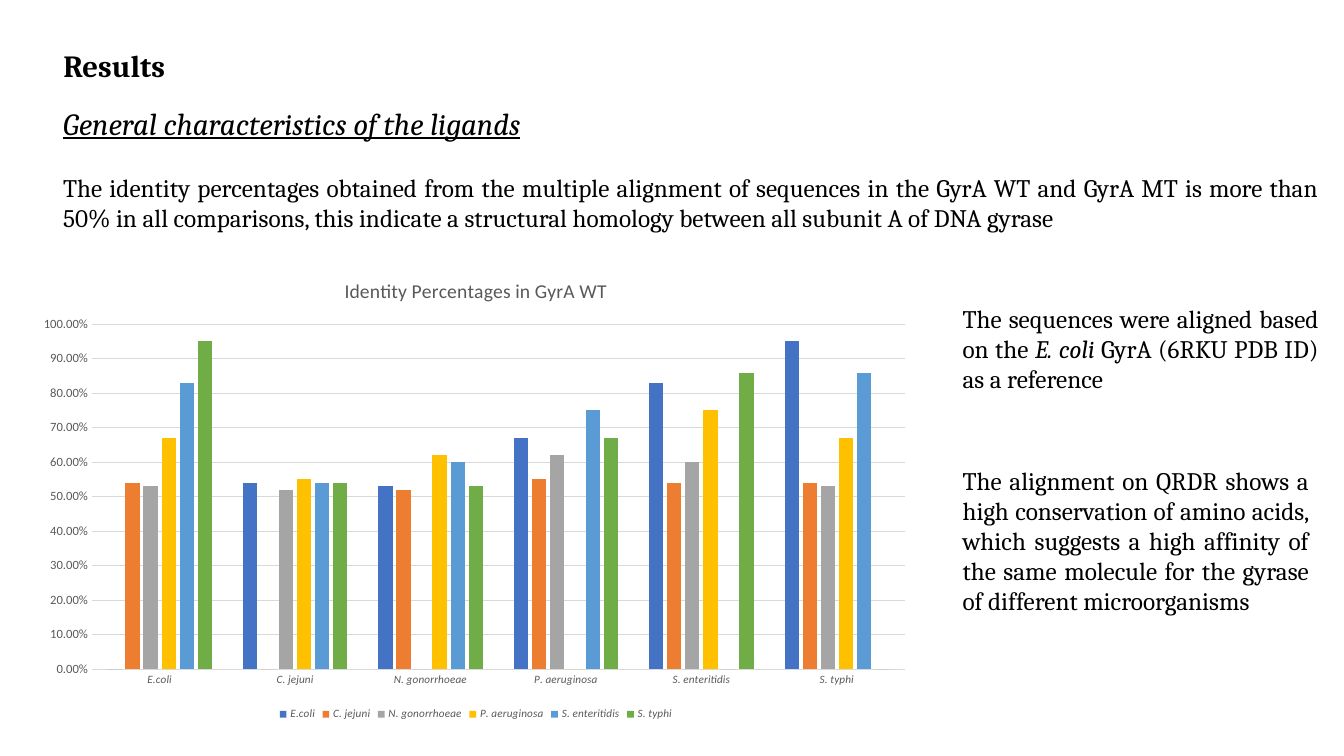
from lxml import etree
from pptx import Presentation
from pptx.chart.data import CategoryChartData
from pptx.enum import chart as ch, text
from pptx.dml.color import RGBColor
from pptx.util import Pt

# Content
COLORS = {"ink": "000000", "label": "595959", "grid": "D9D9D9"}
RESULTS = [("Results", {"size": Pt(22), "bold": True})]
# (left, top, width, height), space before, runs
NOTES = [
    ((38, 71, 862, 34), 12,
     [("General characteristics of the ligands",
       {"size": Pt(22), "italic": True, "underline": True})]),
    ((38, 119.5, 911, 51), 0,
     [("The identity percentages obtained from the multiple alignment of sequences in the "
       "GyrA WT and GyrA MT is more than 50% in all comparisons, this indicate a structural "
       "homology between all subunit A of DNA gyrase", {})]),
    ((680.5, 213, 268.5, 73), 0,
     [("The sequences were aligned based on the ", {}),
      ("E. coli", {"italic": True}),
      (" GyrA (6RKU PDB ID) as a reference", {})]),
    ((680.5, 328.5, 261.5, 138), 0,
     [("The alignment on QRDR shows a high conservation of amino acids, which suggests a "
       "high affinity of the same molecule for the gyrase of different microorganisms", {})]),
]
CHART_TITLE = "Identity Percentages in GyrA WT"
CHART_BOX = (21, 185, 638, 333)
PLOT = {"x": 0.07, "y": 0.14, "w": 0.91, "h": 0.74}
# Each species is compared with every species in the same order
SPECIES = [
    ("E.coli", "4472C4", (0, 0.54, 0.53, 0.67, 0.83, 0.95)),
    ("C. jejuni", "ED7D31", (0.54, 0, 0.52, 0.55, 0.54, 0.54)),
    ("N. gonorrhoeae", "A5A5A5", (0.53, 0.52, 0, 0.62, 0.6, 0.53)),
    ("P. aeruginosa", "FFC000", (0.67, 0.55, 0.62, 0, 0.75, 0.67)),
    ("S. enteritidis", "5B9BD5", (0.83, 0.54, 0.6, 0.75, 0, 0.86)),
    ("S. typhi", "70AD47", (0.95, 0.54, 0.53, 0.67, 0.86, 0)),
]


def rgb(name):
    return RGBColor.from_string(COLORS.get(name, name))


def style(font, color, **formats):
    font.color.rgb = rgb(color)
    for key, value in formats.items():
        setattr(font, key, value)


def write(sp, runs, before):
    tf = sp.text_frame
    frame = {"word_wrap": True, "auto_size": text.MSO_AUTO_SIZE.NONE,
             "vertical_anchor": text.MSO_ANCHOR.TOP}
    for key, value in frame.items():
        setattr(tf, key, value)
    p = tf.paragraphs[0]
    p.alignment = text.PP_ALIGN.JUSTIFY
    p.space_before = Pt(before)
    for words, formats in runs:
        r = p.add_run()
        r.text = words
        style(r.font, "ink", **{"name": "Cambria", "size": Pt(18), **formats})


prs = Presentation()
prs.slide_width, prs.slide_height = Pt(960), Pt(540)
s = prs.slides.add_slide(prs.slide_layouts[5])

# Title and text
title = s.shapes.title
for key, value in zip(("left", "top", "width", "height"), (38, 30, 862, 34)):
    setattr(title, key, Pt(value))
write(title, RESULTS, 12)
for box, before, runs in NOTES:
    write(s.shapes.add_textbox(*map(Pt, box)), runs, before)

# Chart
data = CategoryChartData(number_format="0.00%")
data.categories = [name for name, _, _ in SPECIES]
for name, _, values in SPECIES:
    data.add_series(name, values)
chart = s.shapes.add_chart(ch.XL_CHART_TYPE.COLUMN_CLUSTERED,
                           *map(Pt, CHART_BOX), data).chart
style(chart.font, "ink", name="Calibri", size=Pt(10))
chart.has_title = True
chart.chart_title.include_in_layout = False
p = chart.chart_title.text_frame.paragraphs[0]
r = p.add_run()
r.text = CHART_TITLE
style(r.font, "label", name="Calibri", size=Pt(14), bold=False)

plot = chart.plots[0]
for key, value in {"gap_width": 219, "overlap": -27, "vary_by_categories": False}.items():
    setattr(plot, key, value)
for series, (_, color, _) in zip(plot.series, SPECIES):
    series.format.fill.solid()
    series.format.fill.fore_color.rgb = rgb(color)
    series.invert_if_negative = False

# Axes and legend
cat, val = chart.category_axis, chart.value_axis
for axis, size, italic in ((cat, 8, True), (val, 9, False)):
    axis.major_tick_mark = axis.minor_tick_mark = ch.XL_TICK_MARK.NONE
    style(axis.tick_labels.font, "label", name="Calibri", size=Pt(size), italic=italic)
val.minimum_scale, val.maximum_scale, val.major_unit = 0, 1, 0.1
val.tick_labels.number_format = "0.00%"
val.tick_labels.number_format_is_linked = False
val.format.line.fill.background()
for line in (cat.format.line, val.major_gridlines.format.line):
    line.color.rgb = rgb("grid")
    line.width = Pt(0.75)
chart.has_legend = True
chart.legend.position = ch.XL_LEGEND_POSITION.BOTTOM
chart.legend.include_in_layout = False
style(chart.legend.font, "label", name="Calibri", size=Pt(8), italic=True)

# Fixed plot area inside the chart
area = chart.element.find(".//{*}plotArea")
ns = "{%s}" % etree.QName(area).namespace
for old in area.findall(ns + "layout"):
    area.remove(old)
layout = etree.Element(ns + "layout")
area.insert(0, layout)
manual = etree.SubElement(layout, ns + "manualLayout")
for tag, value in {"layoutTarget": "inner", "xMode": "edge", "yMode": "edge", **PLOT}.items():
    etree.SubElement(manual, ns + tag, val=str(value))

prs.save("out.pptx")
